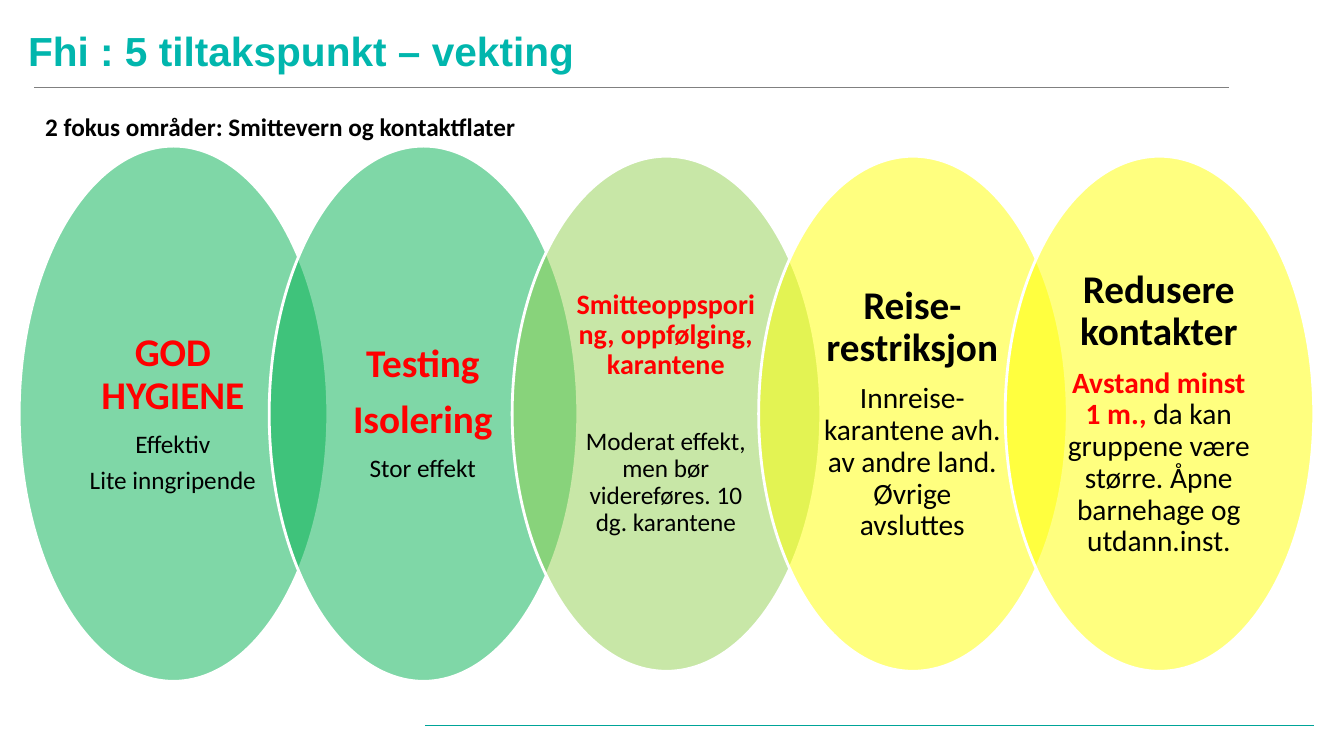
from dataclasses import dataclass

from lxml import etree
from pptx import Presentation
from pptx import util as u
from pptx.dml.color import RGBColor
from pptx.enum import shapes, text
from pptx.oxml.ns import qn


@dataclass(frozen=True)
class Theme:
    title_font: str = "Arial"
    body_font: str = "Calibri"
    teal: str = "01B6AD"
    rule_teal: str = "00A498"
    rule_grey: str = "808080"
    white: str = "FFFFFF"
    black: str = "000000"
    red: str = "FF0000"
    green: str = "00B050"
    lime: str = "92D050"
    yellow: str = "FFFF00"
    title: int = 29
    head: int = 28
    small_head: int = 20
    large: int = 21
    body: int = 18
    ellipse_line: int = 2
    alpha: int = 50


T = Theme()


@dataclass(frozen=True)
class Run:
    words: str
    size: int
    color: str = T.black
    bold: bool = False
    font: str = T.body_font


@dataclass(frozen=True)
class Para:
    runs: tuple[Run, ...]
    gap: float = 0  # points after; 0 means a share of the type size


@dataclass(frozen=True)
class Measure:
    fill: str
    height: float
    paras: tuple[Para, ...]
    nudge: float = 0


@dataclass(frozen=True)
class Rule:
    start: float
    end: float
    y: float
    color: str
    width: float


# All lengths are percentages of the slide's width or height.
SLIDE_W, SLIDE_H = u.Inches(13.33), u.Inches(7.5)
FIRST_LEFT, PITCH, ELLIPSE_W, MID_Y = 1.43, 18.34, 22.96, 54.73
TEXT_INDENT, TEXT_W = 3.33, 16.2
TEXT_SHARE, GAP_SHARE = 0.71, 0.35
TALL, LOW = 70.8, 68.13

RULES = (Rule(2.55, 91.45, 11.6, T.rule_grey, 0.5),
         Rule(97.75, 31.66, 96, T.rule_teal, 0.75))


def line(words: str, size: int, color: str = T.black, bold: bool = False, gap: float = 0) -> Para:
    return Para((Run(words, size, color, bold),), gap)


MEASURES = (
    Measure(T.green, TALL, (
        line("GOD HYGIENE", T.head, T.red, True),
        line("Effektiv", T.body),
        line("Lite inngripende", T.body))),
    Measure(T.green, TALL, (
        line("Testing", T.head, T.red, True),
        line("Isolering", T.head, T.red, True),
        line("Stor effekt", T.body)), nudge=0.26),
    Measure(T.lime, LOW, (
        line("Smitteoppsporing, oppfølging, karantene", T.small_head, T.red, True, gap=34),
        line("Moderat effekt, men bør videreføres. 10 dg. karantene", T.body))),
    Measure(T.yellow, LOW, (
        line("Reise-restriksjon", T.head, bold=True),
        line("Innreise-karantene avh. av andre land. Øvrige avsluttes", T.large))),
    Measure(T.yellow, LOW, (
        line("Redusere kontakter", T.head, bold=True),
        Para((Run("Avstand minst 1 m., ", T.large, T.red, True),
              Run("da kan gruppene være større. Åpne barnehage og utdann.inst.", T.large))))),
)


def x(percent: float) -> int:
    return round(SLIDE_W * percent / 100)


def y(percent: float) -> int:
    return round(SLIDE_H * percent / 100)


def add_runs(p, runs: tuple[Run, ...]) -> None:
    for run in runs:
        r = p.add_run()
        r.text = run.words
        r.font.name = run.font
        r.font.size = u.Pt(run.size)
        r.font.bold = run.bold
        r.font.color.rgb = RGBColor.from_string(run.color)


def add_rule(s, rule: Rule) -> None:
    c = s.shapes.add_connector(shapes.MSO_CONNECTOR.STRAIGHT,
                               x(rule.start), y(rule.y), x(rule.end), y(rule.y))
    c.line.color.rgb = RGBColor.from_string(rule.color)
    c.line.width = u.Pt(rule.width)
    etree.SubElement(c._element.spPr, qn("a:effectLst"))


def add_label(s, left: float, top: float, width: float, height: float,
              run: Run, wrap: bool) -> None:
    tf = s.shapes.add_textbox(x(left), y(top), x(width), y(height)).text_frame
    tf.word_wrap = wrap
    tf.vertical_anchor = text.MSO_ANCHOR.MIDDLE
    add_runs(tf.paragraphs[0], (run,))


def add_ellipse(group, measure: Measure, left: float) -> None:
    sp = group.shapes.add_shape(shapes.MSO_SHAPE.OVAL, x(left), y(MID_Y - measure.height / 2),
                                x(ELLIPSE_W), y(measure.height))
    sp.shadow.inherit = False
    sp.fill.solid()
    sp.fill.fore_color.rgb = RGBColor.from_string(measure.fill)
    color = sp._element.spPr.find(qn("a:solidFill")).find(qn("a:srgbClr"))
    etree.SubElement(color, qn("a:alpha"), val=str(T.alpha * 1000))
    sp.line.color.rgb = RGBColor.from_string(T.white)
    sp.line.width = u.Pt(T.ellipse_line)


def add_measure_text(group, measure: Measure, left: float) -> None:
    height = measure.height * TEXT_SHARE
    tf = group.shapes.add_textbox(x(left + TEXT_INDENT), y(MID_Y - height / 2),
                                  x(TEXT_W), y(height)).text_frame
    tf.word_wrap = True
    tf.vertical_anchor = text.MSO_ANCHOR.MIDDLE
    tf.margin_left = tf.margin_right = x(1.28)
    tf.margin_top = tf.margin_bottom = y(0.5)
    for i, para in enumerate(measure.paras):
        p = tf.add_paragraph() if i else tf.paragraphs[0]
        p.alignment = text.PP_ALIGN.CENTER
        p.line_spacing = 0.9
        p.space_after = u.Pt(para.gap or para.runs[0].size * GAP_SHARE)
        add_runs(p, para.runs)


def main() -> None:
    prs = Presentation()
    prs.slide_width, prs.slide_height = SLIDE_W, SLIDE_H
    s = prs.slides.add_slide(prs.slide_layouts[6])
    for rule in RULES:
        add_rule(s, rule)
    add_label(s, 1.35, 2.93, 84.3, 7.5,
              Run("Fhi : 5 tiltakspunkt – vekting", T.title, T.teal, True, T.title_font), True)
    group = s.shapes.add_group_shape()
    for i, measure in enumerate(MEASURES):
        left = FIRST_LEFT + i * PITCH + measure.nudge
        add_ellipse(group, measure, left)
        add_measure_text(group, measure, left)
    add_label(s, 2.63, 14, 36.9, 5.33,
              Run("2 fokus områder: Smittevern og kontaktflater", T.body, bold=True), False)
    prs.save("out.pptx")


if __name__ == "__main__":
    main()
